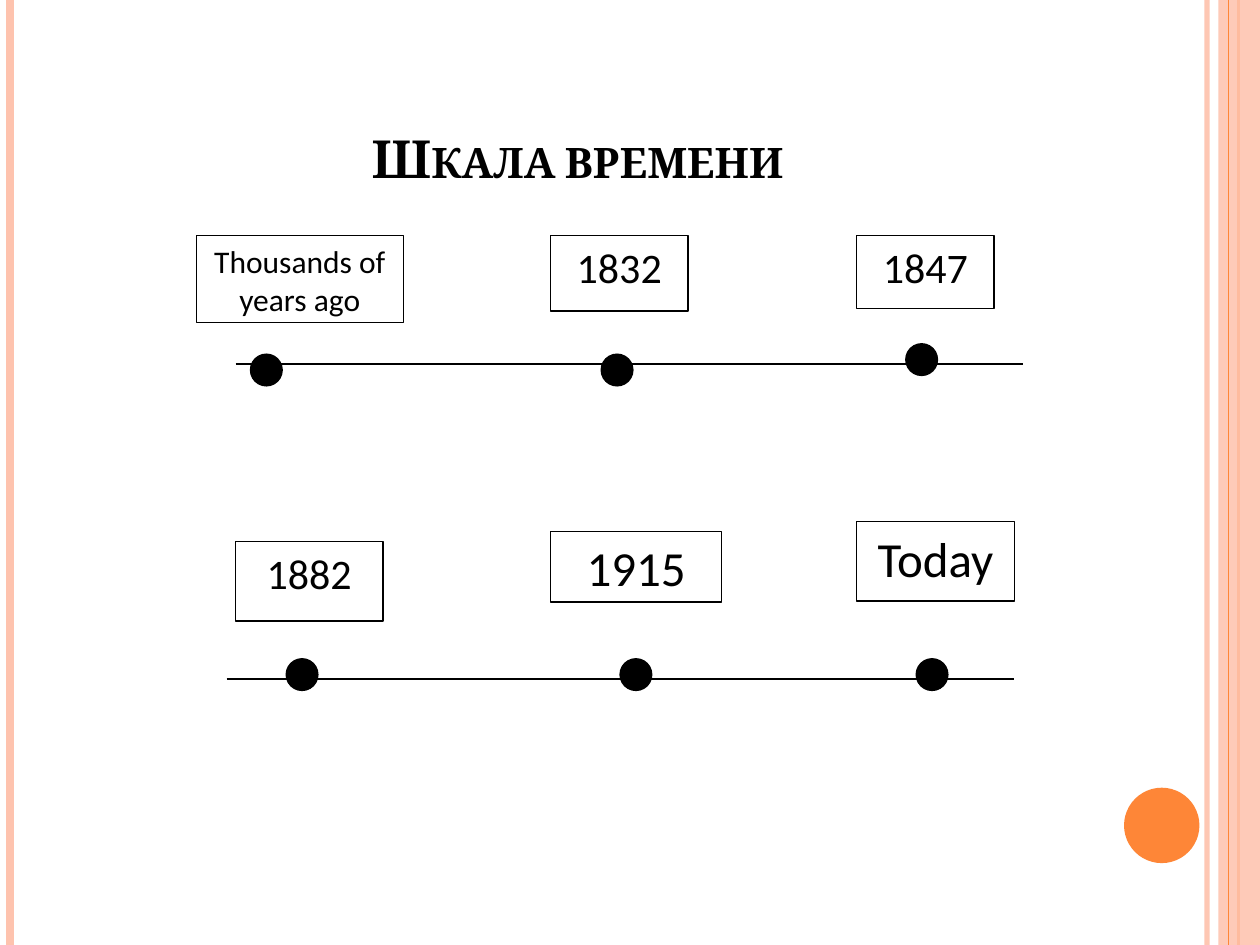
from lxml.etree import SubElement
from pptx import Presentation
from pptx.dml.color import RGBColor
from pptx.enum.shapes import MSO_CONNECTOR as Link, MSO_SHAPE as Form
from pptx.enum.text import MSO_ANCHOR as Anchor, MSO_AUTO_SIZE as Auto, PP_ALIGN as Align
from pptx.oxml.ns import qn
from pptx.util import Cm, Pt


def tint(fill, hue, alpha=100):
    fill.solid()
    fill.fore_color.rgb = RGBColor.from_string(hue)
    if alpha < 100:
        node = fill._xPr.find(".//" + qn("a:srgbClr"))
        SubElement(node, qn("a:alpha")).set("val", str(alpha * 1000))


def write(frame, text, size=24, font="Calibri", bold=False, caps="none", after=10, anchor=Anchor.TOP):
    frame.word_wrap = True
    frame.auto_size = Auto.NONE
    frame.vertical_anchor = anchor
    par = frame.paragraphs[0]
    par.alignment = Align.CENTER
    par.space_after = Pt(after)
    run = par.add_run()
    run.text = text
    run.font.name = font
    run.font.size = Pt(size)
    run.font.bold = bold
    run.font._element.set("cap", caps)
    tint(run.font.fill, BLACK)


BLACK, WHITE, PINK, ORANGE = "000000", "FFFFFF", "FEC3AE", "FE8637"
WIDE, HIGH = 25.4, 19.05

deck = Presentation()
deck.slide_width, deck.slide_height = Cm(WIDE), Cm(HIGH)
slide = deck.slides.add_slide(deck.slide_layouts[5])
shapes = slide.shapes

title = shapes.title
title.left, title.top, title.width, title.height = Cm(1.27), Cm(0.76), Cm(20.75), Cm(3.18)
write(title.text_frame, "Шкала времени", size=30, font="Cambria", bold=True,
      caps="small", after=0, anchor=Anchor.BOTTOM)

lines = [
    (4.75, 7.34, 20.62, 7.34, BLACK, 0.75, 100),
    (4.57, 13.69, 20.45, 13.69, BLACK, 0.75, 100),
    (24.33, 0, 24.33, HIGH, PINK, 3, 93),
    (0.2, 0, 0.2, HIGH, PINK, 4.5, 100),
    (24.97, 0, 24.97, HIGH, ORANGE, 1.5, 100),
    (24.77, 0, 24.77, HIGH, ORANGE, 0.75, 100),
]
for *ends, hue, width, alpha in lines:
    rule = shapes.add_connector(Link.STRAIGHT, *map(Cm, ends))
    rule.line.width = Pt(width)
    tint(rule.line.fill, hue, alpha)
    SubElement(rule._element.spPr, qn("a:effectLst"))

decor = [
    (Form.RECTANGLE, 24.56, 0, 0.84, HIGH, PINK, 87),
    (Form.OVAL, 22.66, 15.88, 1.52, 1.52, ORANGE, 100),
]
for form, *place, hue, alpha in decor:
    part = shapes.add_shape(form, *map(Cm, place))
    part.shadow.inherit = False
    tint(part.fill, hue, alpha)
    part.line.fill.background()
shapes._spTree.append(rule._element)

dates = [
    ("Thousands of years ago", 18, 3.96, 4.75, 4.17, 1.75, 5.05, 7.14),
    ("1832", 24, 11.1, 4.75, 2.77, 1.52, 12.12, 7.14),
    ("1847", 24, 17.27, 4.75, 2.77, 1.47, 18.26, 6.93),
    ("1882", 24, 4.75, 10.92, 2.97, 1.6, 5.77, 13.28),
    ("1915", 28, 11.1, 10.72, 3.45, 1.42, 12.5, 13.28),
    ("Today", 28, 17.27, 10.52, 3.18, 1.6, 18.47, 13.28),
]
for text, size, *place, x, y in dates:
    box = shapes.add_shape(Form.RECTANGLE, *map(Cm, place))
    dot = shapes.add_shape(Form.OVAL, Cm(x), Cm(y), Cm(0.64), Cm(0.64))
    for part, hue in ((box, WHITE), (dot, BLACK)):
        part.shadow.inherit = False
        tint(part.fill, hue)
        tint(part.line.fill, BLACK)
        part.line.width = Pt(0.75)
    write(box.text_frame, text, size=size)

deck.save("out.pptx")
